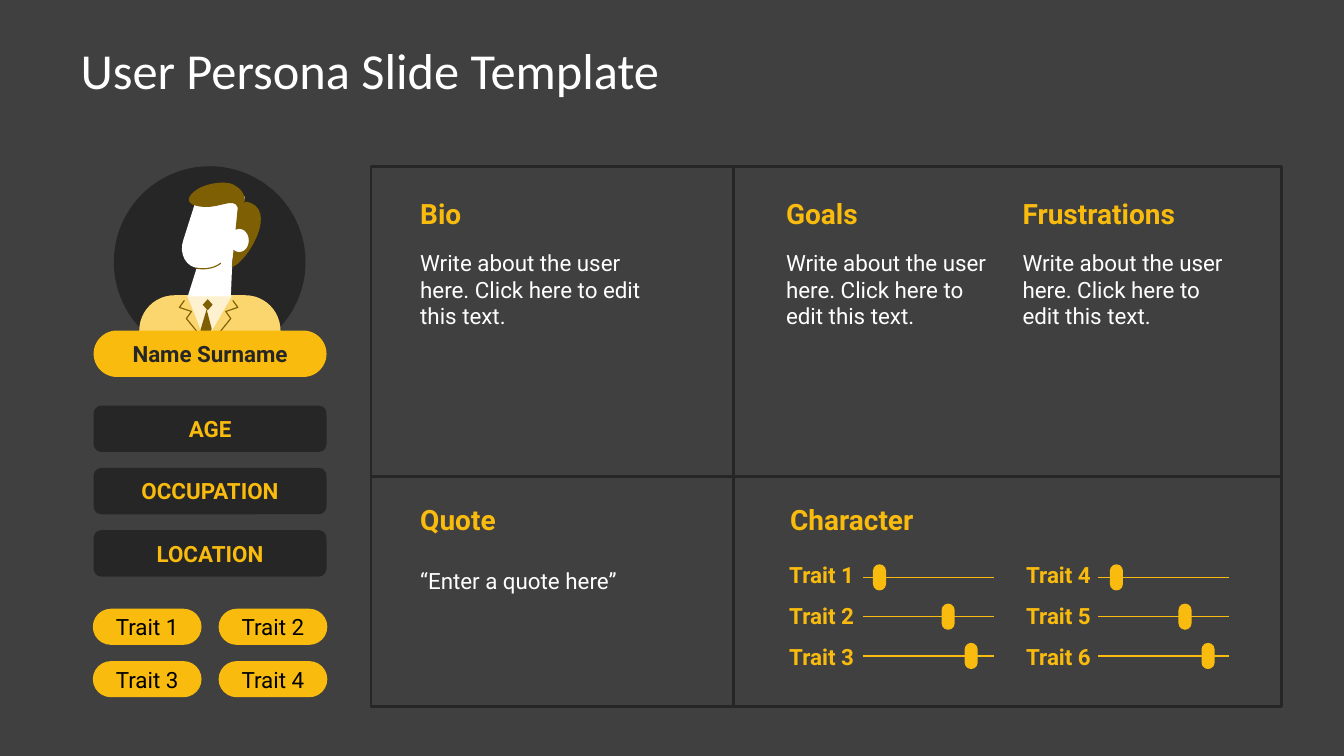
from lxml.etree import SubElement
from pptx import Presentation
from pptx.dml.color import RGBColor
from pptx.enum.shapes import MSO_CONNECTOR, MSO_SHAPE as Preset
from pptx.enum.text import MSO_ANCHOR as Anchor, PP_ALIGN as Align
from pptx.oxml.ns import qn
from pptx.util import Cm, Pt

COLOURS = {
    "page": "404040", "dark": "262626", "yellow": "F8BB0E", "white": "FFFFFF",
    "black": "000000", "hair": "7F5F04", "shirt": "FEF1CF", "jacket": "FBD66E",
}
PALETTE = {name: RGBColor.from_string(code) for name, code in COLOURS.items()}

deck = Presentation()
deck.slide_width, deck.slide_height = Cm(33.87), Cm(19.05)
page = deck.slides.add_slide(deck.slide_layouts[6])
page.background.fill.solid()
page.background.fill.fore_color.rgb = PALETTE["page"]


def write(text, place=None, block=None, size=16, colour="white", bold=False,
          font="Roboto", align=Align.LEFT, anchor=Anchor.MIDDLE):
    """Put text into a block, or into a new text box at place (in cm)."""
    box = block or page.shapes.add_textbox(*map(Cm, place))
    frame = box.text_frame
    frame.word_wrap = True
    frame.vertical_anchor = anchor
    frame.margin_left = frame.margin_right = frame.margin_top = frame.margin_bottom = 0
    para = frame.paragraphs[0]
    para.alignment = align
    span = para.add_run()
    span.text = text
    span.font.name, span.font.size, span.font.bold = font, Pt(size), bold
    span.font.color.rgb = PALETTE[colour]


def add_block(preset, place, fill, roundness=None):
    block = page.shapes.add_shape(preset, *map(Cm, place))
    block.shadow.inherit = False
    block.line.fill.background()
    block.fill.solid()
    block.fill.fore_color.rgb = PALETTE[fill]
    if roundness is not None:
        block.adjustments[0] = roundness
    return block


write("User Persona Slide Template", (2.03, 0.76, 29.8, 1.98), size=36, font="Calibri")

# Frame of the four fields
LEFT, TOP, WIDTH, HEIGHT = 9.35, 4.19, 22.94, 13.61
frame_box = add_block(Preset.RECTANGLE, (LEFT, TOP, WIDTH, HEIGHT), "page")
frame_box.fill.background()
frame_box.line.color.rgb = PALETTE["dark"]
frame_box.line.width = Pt(2)

# Dividers of the frame, then the slider tracks
rules = [
    (18.49, TOP, 18.49, TOP + HEIGHT, "dark", 2),
    (LEFT, 12.01, LEFT + WIDTH, 12.01, "dark", 2),
]
for track_left in (21.74, 27.66):
    for row in range(3):
        y = 14.55 + 0.99 * row
        rules.append((track_left, y, track_left + 3.3, y, "yellow", 1))
for *ends, colour, weight in rules:
    rule = page.shapes.add_connector(MSO_CONNECTOR.STRAIGHT, *map(Cm, ends))
    rule.line.color.rgb = PALETTE[colour]
    rule.line.width = Pt(weight)
    SubElement(rule.element.spPr, qn("a:effectLst"))

# Field headings and texts
UPPER, LOWER = 4.9, 12.62
prompt = "Write about the user here. Click here to edit this text."
for heading, x, y, text, gap, width in [
    ("Bio", 10.59, UPPER, prompt, 1.37, 6.07),
    ("Quote", 10.59, LOWER, "“Enter a quote here”", 1.68, 6.07),
    ("Goals", 19.81, UPPER, prompt, 1.37, 5.05),
    ("Frustrations", 25.77, UPPER, prompt, 1.37, 5.05),
    ("Character", 19.91, LOWER, None, 0, 5.05),
]:
    write(heading, (x, y, 4.75, 0.94), size=20, colour="yellow", bold=True)
    if text:
        write(text, (x, y + gap, width, 2.03), anchor=Anchor.TOP)

# Character sliders
for column in range(2):
    shift = 5.97 * column
    for row, knob_left in enumerate((22, 23.73, 24.31)):
        add_block(Preset.ROUNDED_RECTANGLE,
                  (knob_left + shift, 14.22 + 0.99 * row, 0.33, 0.66), "yellow", 0.5)
        write(f"Trait {3 * column + row + 1}",
              (19.89 + shift, 14.2 + 1.03 * row, 2.06, 0.58), colour="yellow", bold=True)

# Personal details
PANEL_LEFT, PANEL_WIDTH, PANEL_HEIGHT = 2.36, 5.87, 1.17
for row, label in enumerate(("AGE", "OCCUPATION", "LOCATION")):
    place = (PANEL_LEFT, 10.22 + 1.57 * row, PANEL_WIDTH, PANEL_HEIGHT)
    panel = add_block(Preset.ROUNDED_RECTANGLE, place, "dark", 0.167)
    write(label, block=panel, colour="yellow", bold=True, align=Align.CENTER)

for number in range(4):
    row, column = divmod(number, 2)
    place = (2.34 + 3.17 * column, 15.34 + 1.32 * row, 2.74, 0.91)
    pill = add_block(Preset.ROUNDED_RECTANGLE, place, "yellow", 0.5)
    write(f"Trait {number + 1}", block=pill, colour="black", align=Align.CENTER)

# Portrait: a pair is a straight step, six numbers are a Bézier curve
UNIT = Cm(0.0254)
add_block(Preset.OVAL, (2.87, 4.19, 4.83, 4.83), "dark")
add_block(Preset.ROUND_2_SAME_RECTANGLE, (3.51, 7.44, 3.56, 1.78), "jacket", 0.5)
neck = [(198, 257), (186, 295), (229, 295), (231, 248)]
face = [(195, 197), (182, 238), (177, 252, 185, 266, 198, 266), (229, 266), (243, 195)]
hair_top = [(236, 206), (232, 194, 215, 210, 194, 204), (180, 200, 191, 190, 199, 186),
            (212, 180, 228, 180, 233, 184), (245, 190, 246, 205, 236, 206)]
hair_behind = [(236, 205), (230, 265), (245, 261, 278, 206, 244, 200)]
shirt = [(186, 294), (204, 339), (230, 294)]
tie = [(205, 307), (199, 327), (200, 340), (206, 340), (210, 326)]
mouth = [(219, 261), (219, 261, 211, 269, 194, 266)]
right_lapel = [(231, 298), (236, 305), (224, 309), (229, 316), (212, 337)]
left_lapel = [(414 - x, y) for x, y in right_lapel]

for colour, closed, (start, *steps) in [
    ("white", True, neck), ("white", True, face), ("hair", True, hair_top),
    ("hair", True, hair_behind), ("shirt", True, shirt), ("hair", True, tie),
    ("hair", False, mouth), ("hair", False, right_lapel), ("hair", False, left_lapel),
]:
    points = [step[i:i + 2] for step in steps for i in range(0, len(step), 2)]
    builder = page.shapes.build_freeform(*start, scale=UNIT)
    builder.add_line_segments(points, close=closed)
    part = builder.convert_to_shape()
    part.shadow.inherit = False
    if closed:
        part.fill.solid()
        part.fill.fore_color.rgb = PALETTE[colour]
        part.line.fill.background()
    else:
        part.fill.background()
        part.line.color.rgb = PALETTE[colour]
        part.line.width = Pt(0.81)

    segments = iter(list(part.element.iter(qn("a:lnTo"))))
    for step in steps:
        segment = next(segments)
        if len(step) == 6:
            outline = segment.getparent()
            curve = SubElement(outline, qn("a:cubicBezTo"))
            segment.addprevious(curve)
            for handle in (segment, next(segments), next(segments)):
                curve.append(handle[0])
                outline.remove(handle)

add_block(Preset.OVAL, (5.79, 5.77, 0.48, 0.58), "white")
add_block(Preset.DIAMOND, (5.11, 7.54, 0.25, 0.28), "hair")

place = (PANEL_LEFT, 8.33, PANEL_WIDTH, PANEL_HEIGHT)
name_pill = add_block(Preset.ROUNDED_RECTANGLE, place, "yellow", 0.5)
write("Name Surname", block=name_pill, colour="dark", bold=True, align=Align.CENTER)

deck.save("out.pptx")
